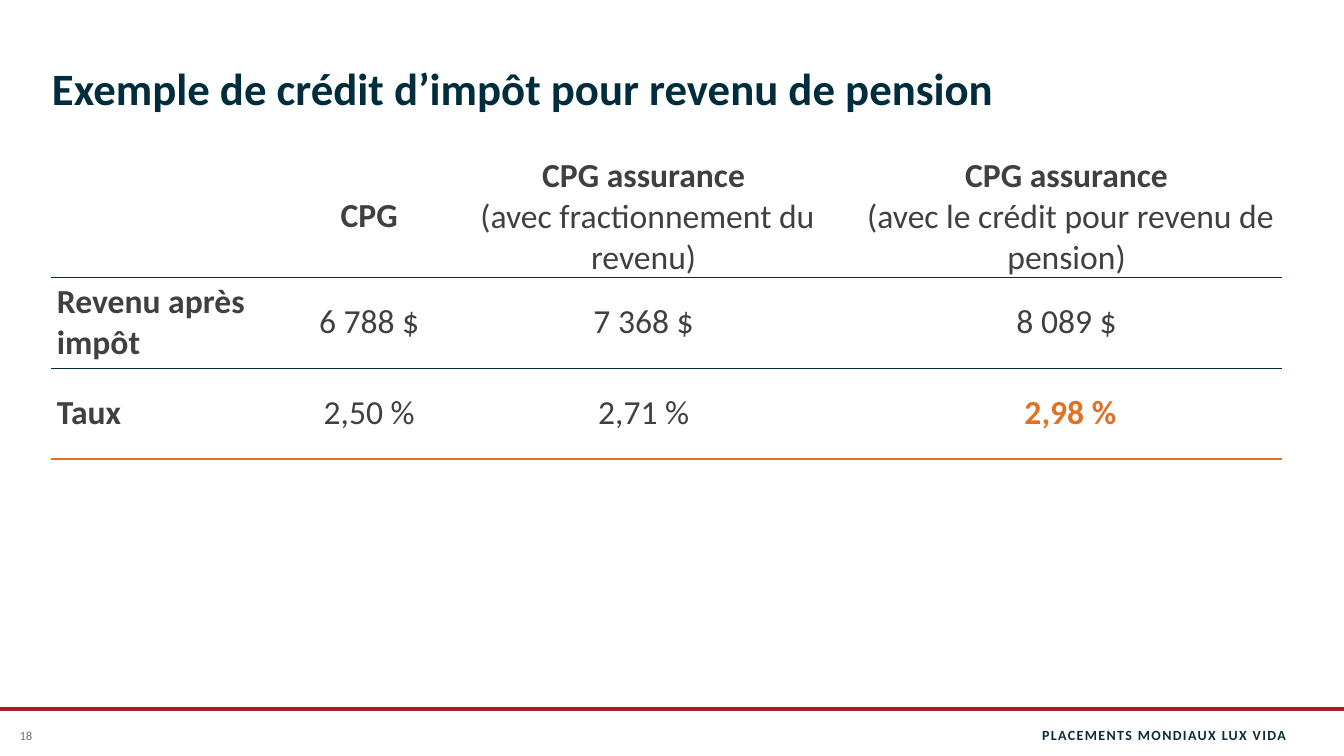
import pptx
import pptx.dml.color
import pptx.enum.shapes
import pptx.enum.text
import pptx.oxml
import pptx.oxml.ns
import pptx.util
from lxml import etree

PX = 914400 / 100.8
FONT = "Calibri"
NBSP = chr(160)
COLORS = {
    "navy": "002D3D",
    "footer": "0D2B3C",
    "number": "767171",
    "body": "404040",
    "orange": "DF7227",
    "red": "A91E22",
    "white": "FFFFFF",
}
ALIGN = pptx.enum.text.PP_ALIGN
ANCHOR = pptx.enum.text.MSO_ANCHOR

COLUMN_WIDTHS = [258, 126, 423, 423]
ROW_HEIGHT = 91
HEADERS = [
    [],
    ["CPG"],
    ["CPG assurance", "(avec fractionnement du revenu)"],
    ["CPG assurance", "(avec le crédit pour revenu de pension)"],
]
ROWS = [
    ["Revenu après impôt", "6 788 $", "7 368 $", "8 089 $"],
    ["Taux", "2,50 %", "2,71 %", "2,98 %"],
]
BEST_RATE = "2,98 %"


def px(n):
    return pptx.util.Emu(round(n * PX))


def rgb(name):
    return pptx.dml.color.RGBColor.from_string(COLORS[name])


def style_paragraph(p, size, color, bold=False, align=ALIGN.LEFT):
    p.alignment = align
    p.font.name = FONT
    p.font.size = pptx.util.Pt(size)
    p.font.bold = bold
    p.font.color.rgb = rgb(color)


def add_text(slide, text, box, size, color, bold=False, align=ALIGN.LEFT,
             anchor=ANCHOR.MIDDLE, spacing=0):
    """Add a one-line text box; spacing is letter spacing in points."""
    tf = slide.shapes.add_textbox(*map(px, box)).text_frame
    tf.word_wrap = True
    tf.vertical_anchor = anchor
    tf.margin_left = tf.margin_top = tf.margin_right = tf.margin_bottom = 0
    p = tf.paragraphs[0]
    r = p.add_run()
    r.text = text
    style_paragraph(p, size, color, bold, align)
    if spacing:
        r.font._element.set("spc", str(spacing * 100))


def add_rule(slide, x1, x2, y, color, width):
    line = slide.shapes.add_connector(
        pptx.enum.shapes.MSO_CONNECTOR.STRAIGHT, px(x1), px(y), px(x2), px(y))
    line.line.color.rgb = rgb(color)
    line.line.width = pptx.util.Pt(width)
    etree.SubElement(line._element.spPr, pptx.oxml.ns.qn("a:effectLst"))


def set_borders(cell, top, bottom):
    """Draw white sides and the given (colour, points) top and bottom edges."""
    side = ("white", 1)
    tcPr = cell._tc.get_or_add_tcPr()
    for tag, (color, width) in zip(("lnL", "lnR", "lnT", "lnB"),
                                   (side, side, top, bottom)):
        tcPr.append(pptx.oxml.parse_xml(
            f'<a:{tag} {pptx.oxml.ns.nsdecls("a")} w="{round(width * 12700)}">'
            f'<a:solidFill><a:srgbClr val="{COLORS[color]}"/></a:solidFill>'
            f'</a:{tag}>'))


def fill_cell(cell, lines, bold, color, align):
    """Write the lines as paragraphs; only the first can be bold."""
    cell.vertical_anchor = ANCHOR.MIDDLE
    cell.margin_left = cell.margin_right = px(5)
    cell.margin_top = cell.margin_bottom = 0
    cell.fill.background()
    tf = cell.text_frame
    for i, line in enumerate(lines):
        p = tf.add_paragraph() if i else tf.paragraphs[0]
        p.add_run().text = line if line == BEST_RATE else line + NBSP
        style_paragraph(p, 24, color, bold and i == 0, align)


def add_comparison_table(slide):
    rows = [HEADERS] + [[[text] for text in row] for row in ROWS]
    table = slide.shapes.add_table(
        len(rows), len(COLUMN_WIDTHS), px(52), px(156),
        px(sum(COLUMN_WIDTHS)), px(ROW_HEIGHT * len(rows))).table
    table.first_row = table.horz_banding = False
    for column, width in zip(table.columns, COLUMN_WIDTHS):
        column.width = px(width)
    edges = [("white", 1), ("navy", 0.5), ("navy", 0.5), ("orange", 1)]
    for i, row in enumerate(rows):
        table.rows[i].height = px(ROW_HEIGHT)
        for j, lines in enumerate(row):
            cell = table.cell(i, j)
            best = lines == [BEST_RATE]
            set_borders(cell, edges[i], edges[i + 1])
            fill_cell(cell, lines, i == 0 or j == 0 or best,
                      "orange" if best else "body",
                      ALIGN.CENTER if j else ALIGN.LEFT)


def main():
    prs = pptx.Presentation()
    prs.slide_width, prs.slide_height = px(1344), px(756)
    slide = prs.slides.add_slide(prs.slide_layouts[6])
    add_rule(slide, -1, 1344, 709, "red", 2.25)
    add_text(slide, "PLACEMENTS MONDIAUX LUX VIDA", (975, 715, 311, 40), 10,
             "footer", bold=True, align=ALIGN.RIGHT, spacing=1)
    add_text(slide, "18", (0, 715, 52, 40), 9, "number", align=ALIGN.CENTER)
    add_comparison_table(slide)
    add_text(slide, "Exemple de crédit d’impôt pour revenu de pension",
             (52, 0, 1230, 115), 32, "navy", bold=True, anchor=ANCHOR.BOTTOM)
    prs.save("out.pptx")


if __name__ == "__main__":
    main()
